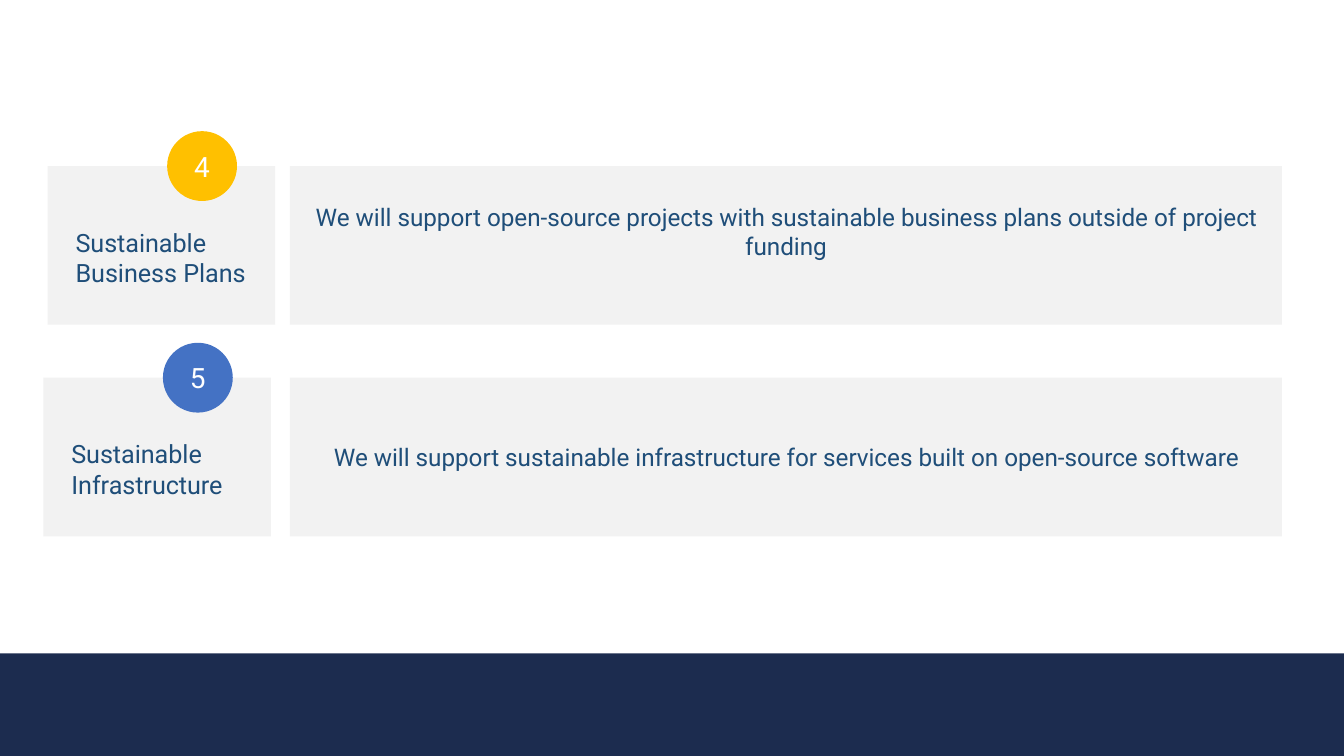
import pptx
import pptx.util
import pptx.dml.color
import pptx.enum.shapes
import pptx.enum.text

Cm = pptx.util.Cm
Pt = pptx.util.Pt
Kind = pptx.enum.shapes.MSO_SHAPE
Align = pptx.enum.text.PP_ALIGN
Anchor = pptx.enum.text.MSO_ANCHOR

NAVY, GREY, INK, WHITE = "1C2C4F", "F2F2F2", "1F4E79", "FFFFFF"
WIDE, HIGH = 25.4, 14.29


def tint(color, code):
    """Set a colour format from a hex string."""
    color.rgb = pptx.dml.color.RGBColor.from_string(code)


def write(shape, text, size, code, align):
    """Put one styled paragraph into a shape."""
    frame = shape.text_frame
    frame.word_wrap = True
    frame.text = text
    para = frame.paragraphs[0]
    para.alignment = align
    for run in para.runs:
        run.font.name = "Roboto"
        run.font.size = Pt(size)
        tint(run.font.color, code)


def block(slide, kind, box, fill):
    """Draw a flat filled shape in a box given in centimetres."""
    shape = slide.shapes.add_shape(kind, *map(Cm, box))
    shape.shadow.inherit = False
    shape.fill.solid()
    tint(shape.fill.fore_color, fill)
    shape.line.fill.background()
    return shape


def center(shape, text, size, code, low=0.05):
    """Write centred text, raised by a larger lower inset."""
    write(shape, text, size, code, Align.CENTER)
    frame = shape.text_frame
    frame.vertical_anchor = Anchor.MIDDLE
    frame.margin_left = frame.margin_right = Cm(0.1)
    frame.margin_top, frame.margin_bottom = Cm(0.05), Cm(low)


def card(slide, box, number, fill, label):
    """Draw a label card with its numbered badge."""
    left, top, wide, high = box
    block(slide, Kind.RECTANGLE, box, GREY)
    badge = block(slide, Kind.OVAL, (left + 2.26, top - 0.66, 1.32, 1.32), fill)
    center(badge, number, 15, WHITE)
    note = slide.shapes.add_textbox(
        Cm(left + 0.28), Cm(top + 1.03), Cm(wide - 0.36), Cm(1.42))
    write(note, label, 13.5, INK, Align.LEFT)


def panel(slide, box, text, low):
    """Draw the wide panel that holds a pledge."""
    center(block(slide, Kind.RECTANGLE, box, GREY), text, 13, INK, low)


def main():
    """Build and save the slide."""
    deck = pptx.Presentation()
    deck.slide_width, deck.slide_height = Cm(WIDE), Cm(HIGH)
    slide = deck.slides.add_slide(deck.slide_layouts[6])
    block(slide, Kind.RECTANGLE, (0, 12.35, WIDE, HIGH - 12.35), NAVY)
    rows = [
        (0.9, "4", "FFC000", "Sustainable Business Plans",
         "We will support open-source projects with sustainable business "
         "plans outside of project funding", 0.6),
        (0.82, "5", "4472C4", "Sustainable Infrastructure",
         "We will support sustainable infrastructure for services built on "
         "open-source software", 0.05),
    ]
    for index, (left, number, fill, label, pledge, low) in enumerate(rows):
        top = 3.14 + 4 * index
        card(slide, (left, top, 4.3, 3), number, fill, label)
        panel(slide, (5.48, top, 18.75, 3), pledge, low)
    deck.save("out.pptx")


if __name__ == "__main__":
    main()
